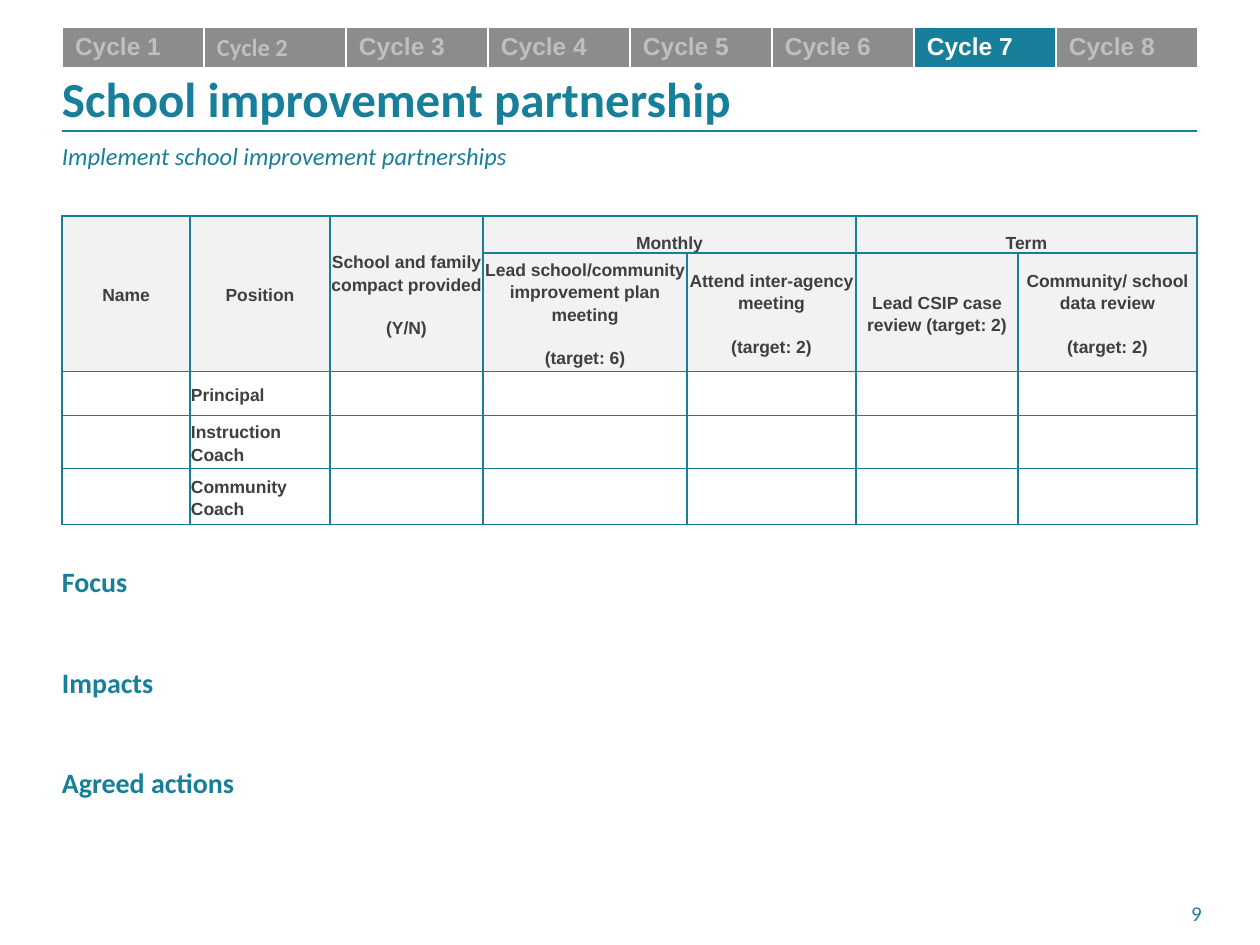
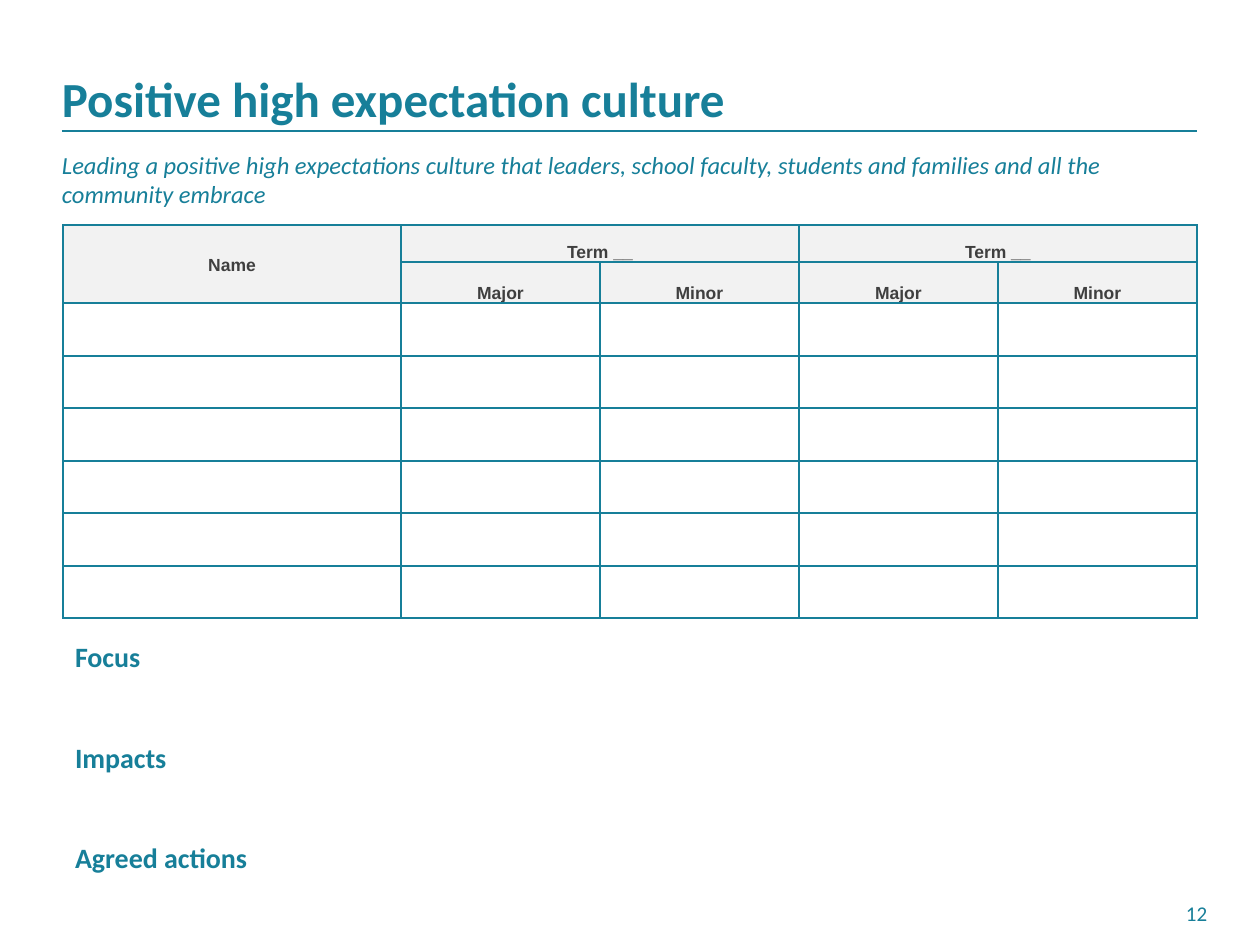
import pptx
import pptx.dml.color
import pptx.enum.shapes
import pptx.enum.text
import pptx.oxml
import pptx.oxml.ns
import pptx.util

RGBColor = pptx.dml.color.RGBColor
ALIGN = pptx.enum.text.PP_ALIGN
ANCHOR = pptx.enum.text.MSO_ANCHOR

TEAL = RGBColor(0x17, 0x7F, 0x99)
WHITE = RGBColor(0xFF, 0xFF, 0xFF)
TAB_GREY = RGBColor(0x8C, 0x8C, 0x8C)
TAB_TEXT = RGBColor(0xBF, 0xBF, 0xBF)
HEADER_FILL = RGBColor(0xF2, 0xF2, 0xF2)
CELL_TEXT = RGBColor(0x3F, 0x3F, 0x3F)

PX_PER_INCH = 126
LEFT, CONTENT_WIDTH = 62, 1135
NO_INSETS = (0, 0, 0, 0)
TEXT_INSETS = (13, 6, 13, 6)
CELL_INSETS = (1, 1, 1, 0)

TITLE_FONT = {"name": "Calibri", "size": pptx.util.Pt(28), "bold": True}
SUBTITLE_FONT = {"name": "Calibri", "size": pptx.util.Pt(14), "italic": True}
HEADING_FONT = {"name": "Calibri", "size": pptx.util.Pt(16), "bold": True}
NUMBER_FONT = {"name": "Calibri", "size": pptx.util.Pt(12)}
TAB_FONT = {"name": "Arial", "size": pptx.util.Pt(14), "bold": True}
CELL_FONT = {"name": "Arial", "size": pptx.util.Pt(10), "bold": True}
CELL_PARAGRAPH = {
    "line_spacing": 1.15,
    "space_before": pptx.util.Pt(6),
    "space_after": pptx.util.Pt(6),
}
HEADINGS = ("Focus", "Impacts", "Agreed actions")


def px(length):
    """Turn px into EMU."""
    return pptx.util.Emu(round(length * 914400 / PX_PER_INCH))


def apply_format(target, values):
    """Set each named attribute on the target."""
    for name, value in values.items():
        setattr(target, name, value)


def set_insets(target, insets):
    """Set the four margins of a text frame or a cell."""
    sides = ("margin_left", "margin_top", "margin_right", "margin_bottom")
    apply_format(target, dict(zip(sides, map(px, insets))))


def write_paragraphs(text_frame, lines, font, color, paragraph_format):
    """Write one formatted paragraph for each line."""
    for index, line in enumerate(lines):
        paragraph = text_frame.add_paragraph() if index else text_frame.paragraphs[0]
        apply_format(paragraph, paragraph_format)
        run = paragraph.add_run()
        run.text = line
        apply_format(run.font, font)
        run.font.color.rgb = color


def add_text(slide, box, lines, font, insets=NO_INSETS, paragraph_format=None):
    """Add a wrapping teal text box."""
    text_frame = slide.shapes.add_textbox(*map(px, box)).text_frame
    text_frame.word_wrap = True
    set_insets(text_frame, insets)
    write_paragraphs(text_frame, lines, font, TEAL, paragraph_format or {})


def set_borders(cell, borders):
    """Give a cell its left, right, top and bottom lines."""
    properties = cell._tc.get_or_add_tcPr()
    for index, (side, (color, width)) in enumerate(zip("LRTB", borders)):
        line = pptx.oxml.parse_xml(
            f'<a:ln{side} {pptx.oxml.ns.nsdecls("a")} w="{pptx.util.Pt(width)}">'
            f'<a:solidFill><a:srgbClr val="{color}"/></a:solidFill></a:ln{side}>'
        )
        properties.insert(index, line)


def fill_cell(cell, color):
    """Fill a cell with one colour."""
    cell.fill.solid()
    cell.fill.fore_color.rgb = color


def add_grid(slide, left, top, widths, heights):
    """Add a plain table with the given columns and rows."""
    box = (left, top, sum(widths), sum(heights))
    table = slide.shapes.add_table(len(heights), len(widths), *map(px, box)).table
    apply_format(table, {"first_row": False, "horz_banding": False})
    for column, width in zip(table.columns, widths):
        column.width = px(width)
    for row, height in zip(table.rows, heights):
        row.height = px(height)
    return table


def add_cycle_tabs(slide, box, current, count=8):
    """Add the strip of cycle tabs with the current one lit."""
    left, top, width, height = box
    table = add_grid(slide, left, top, [width // count] * count, [height])
    for number, cell in enumerate(table.iter_cells(), 1):
        active = number == current
        fill_cell(cell, TEAL if active else TAB_GREY)
        set_borders(cell, [(WHITE, 1)] * 3 + [(WHITE, 3)])
        set_insets(cell, TEXT_INSETS)
        font = TAB_FONT | {"name": "Calibri" if number == 2 else "Arial"}
        color = WHITE if active else TAB_TEXT
        write_paragraphs(cell.text_frame, [f"Cycle {number}"], font, color, {})


def write_cell(cell, lines, align, anchor):
    """Write the text of one record table cell."""
    cell.vertical_anchor = anchor
    paragraph_format = CELL_PARAGRAPH | {"alignment": align}
    write_paragraphs(cell.text_frame, lines, CELL_FONT, CELL_TEXT, paragraph_format)


def add_record_table(slide, origin, widths, heights, headers, labels=()):
    """Add a table with two header rows and labels in the second column."""
    table = add_grid(slide, *origin, widths, heights)
    for index, cell in enumerate(table.iter_cells()):
        fill_cell(cell, HEADER_FILL if index < 2 * len(widths) else WHITE)
        set_borders(cell, [(TEAL, 1)] * 4)
        set_insets(cell, CELL_INSETS)
        end = cell.text_frame.paragraphs[0]._p.get_or_add_endParaRPr()
        end.set("sz", "1000")
    for row, column, row_span, column_span, anchor, lines in headers:
        cell = table.cell(row, column)
        if row_span * column_span > 1:
            cell.merge(table.cell(row + row_span - 1, column + column_span - 1))
        write_cell(cell, lines, ALIGN.CENTER, anchor)
    for row, label in enumerate(labels, 2):
        write_cell(table.cell(row, 1), [label], ALIGN.JUSTIFY, ANCHOR.MIDDLE)


def add_headings(slide, box):
    """Add the three note headings at equal distances."""
    spacing = {"space_before": pptx.util.Pt(38)}
    left, top, width, height = box
    add_text(slide, box, HEADINGS[:1], HEADING_FONT, TEXT_INSETS)
    text_frame = slide.shapes[-1].text_frame
    for heading in HEADINGS[1:]:
        paragraph = text_frame.add_paragraph()
        apply_format(paragraph, spacing)
        run = paragraph.add_run()
        run.text = heading
        apply_format(run.font, HEADING_FONT)
        run.font.color.rgb = TEAL


def add_frame(presentation, title, number):
    """Add a slide with its title, rule and page number."""
    slide = presentation.slides.add_slide(presentation.slide_layouts[6])
    ends = (LEFT, 131, LEFT + CONTENT_WIDTH, 131)
    rule = slide.shapes.add_connector(
        pptx.enum.shapes.MSO_CONNECTOR.STRAIGHT, *map(px, ends)
    )
    apply_format(rule.line, {"width": pptx.util.Pt(1)})
    rule.line.color.rgb = TEAL
    effects = pptx.oxml.parse_xml(f'<a:effectLst {pptx.oxml.ns.nsdecls("a")}/>')
    rule._element.spPr.append(effects)
    add_text(slide, (LEFT, 69, CONTENT_WIDTH, 59), [title], TITLE_FONT)
    centred = {"alignment": ALIGN.CENTER}
    add_text(slide, (1157, 901, 79, 44), [str(number)], NUMBER_FONT, NO_INSETS, centred)
    return slide


def build_partnership(presentation):
    """Build the school improvement partnership slide."""
    slide = add_frame(presentation, "School improvement partnership", 9)
    subtitle = ["Implement school improvement partnerships"]
    add_text(slide, (49, 135, 1162, 43), subtitle, SUBTITLE_FONT, TEXT_INSETS)
    add_headings(slide, (49, 559, 1162, 318))
    add_cycle_tabs(slide, (LEFT, 27, CONTENT_WIDTH + 1, 42), current=7)
    middle, bottom = ANCHOR.MIDDLE, ANCHOR.BOTTOM
    compact = ["School and family compact provided", "(Y/N)"]
    lead_plan = ["Lead school/community improvement plan meeting", "(target: 6)"]
    headers = [
        (0, 0, 2, 1, middle, ["Name"]),
        (0, 1, 2, 1, middle, ["Position"]),
        (0, 2, 2, 1, middle, compact),
        (0, 3, 1, 2, bottom, ["Monthly"]),
        (0, 5, 1, 2, bottom, ["Term"]),
        (1, 3, 1, 1, middle, lead_plan),
        (1, 4, 1, 1, middle, ["Attend inter-agency meeting", "(target: 2)"]),
        (1, 5, 1, 1, middle, ["Lead CSIP case review (target: 2)"]),
        (1, 6, 1, 1, middle, ["Community/ school data review", "(target: 2)"]),
    ]
    widths = [128, 140, 153, 204, 169, 162, 179]
    heights = [37, 115, 44, 53, 56]
    labels = ["Principal", "Instruction Coach", "Community Coach"]
    add_record_table(slide, (LEFT, 216), widths, heights, headers, labels)


def build_culture(presentation):
    """Build the positive high expectation culture slide."""
    slide = add_frame(presentation, "Positive high expectation culture", 12)
    subtitle = [
        "Leading a positive high expectations culture that leaders, school faculty, "
        "students and families and all the community embrace"
    ]
    add_text(slide, (LEFT, 150, 1134, 59), subtitle, SUBTITLE_FONT, (0, 0, 5, 0))
    add_headings(slide, (LEFT, 634, 1155, 251))
    bottom = ANCHOR.BOTTOM
    headers = [(0, 0, 2, 1, ANCHOR.MIDDLE, ["Name"])]
    for column in (1, 3):
        headers.append((0, column, 1, 2, bottom, ["Term __"]))
        headers.append((1, column, 1, 1, bottom, ["Major"]))
        headers.append((1, column + 1, 1, 1, bottom, ["Minor"]))
    widths = [338] + [199] * 4
    heights = [37, 41] + [53, 52] * 3
    add_record_table(slide, (63, 225), widths, heights, headers)


def main():
    """Build and save the presentation."""
    presentation = pptx.Presentation()
    presentation.slide_width = px(1260)
    presentation.slide_height = px(945)
    build_partnership(presentation)
    build_culture(presentation)
    presentation.save("out.pptx")


if __name__ == "__main__":
    main()
